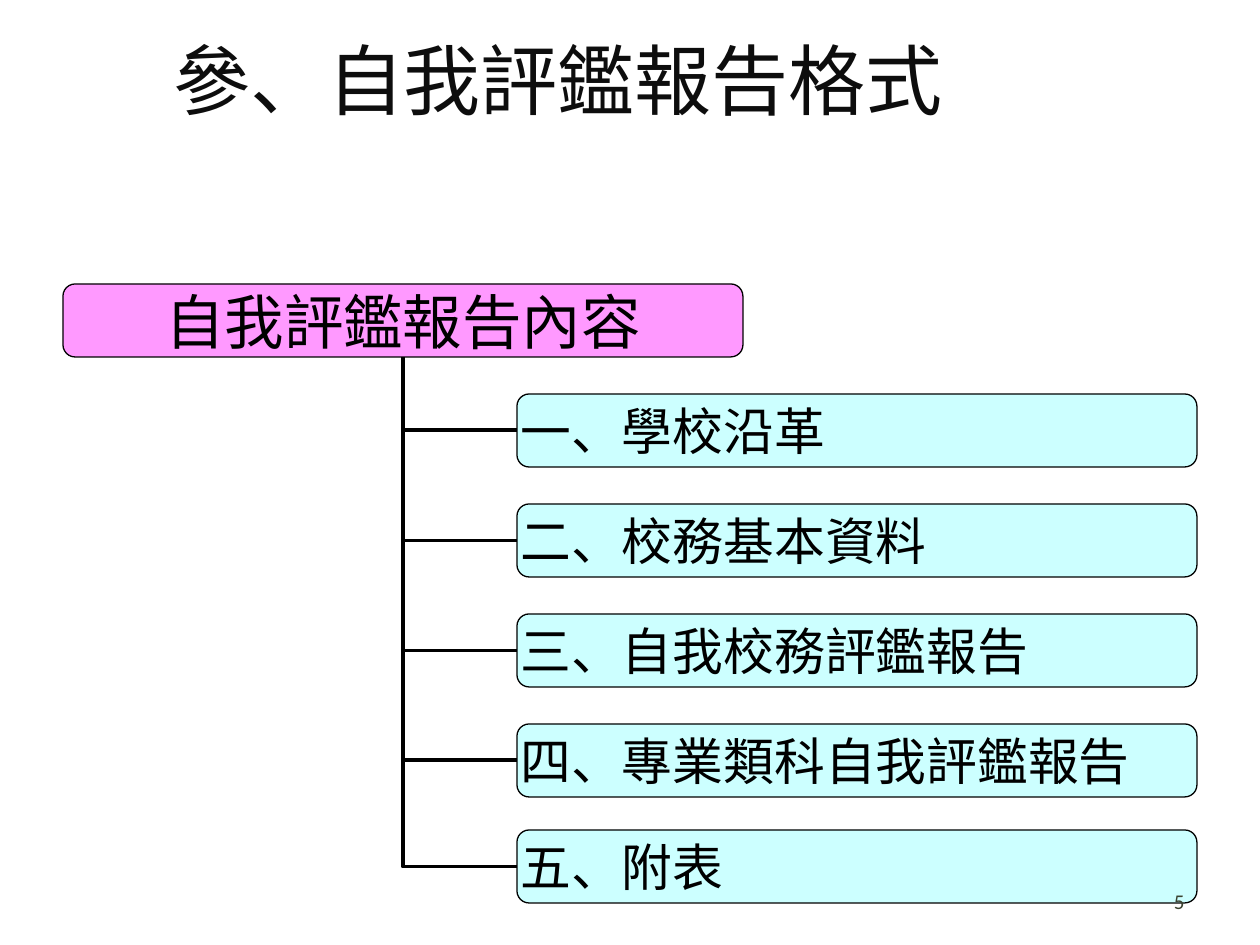
from pptx import Presentation, util as u
from pptx.dml.color import RGBColor
from pptx.enum import shapes, text
from pptx.oxml.ns import qn
from lxml import etree

PX = 914400 / 126
THEME = {
    "ink": "000000", "title": "0D0D0D", "number": "3A4230",
    "root": "FF99FF", "section": "CCFFFF",
    "title_size": 44, "root_size": 34, "section_size": 29, "number_size": 12,
}
SECTIONS = ["一、學校沿革", "二、校務基本資料", "三、自我校務評鑑報告",
            "四、專業類科自我評鑑報告", "五、附表"]


def px(*lengths):
    return [round(length * PX) for length in lengths]


def write(shape, words, size, color, font="Arial",
          align=text.PP_ALIGN.LEFT, inset=None, wrap=True):
    frame = shape.text_frame
    frame.word_wrap = wrap
    frame.vertical_anchor = text.MSO_ANCHOR.MIDDLE
    if inset is not None:
        frame.margin_left = frame.margin_right = inset
        frame.margin_top = frame.margin_bottom = inset
    para = frame.paragraphs[0]
    para.alignment = align
    span = para.add_run()
    span.text = words
    span.font.size = u.Pt(size)
    span.font.name = font
    span.font.color.rgb = RGBColor.from_string(color)


deck = Presentation()
deck.slide_width, deck.slide_height = px(1260, 945)
page = deck.slides.add_slide(deck.slide_layouts[5])

# Title
title = page.shapes.title
title.left, title.top, title.width, title.height = px(0, 0, 1134, 157)
write(title, "參、自我評鑑報告格式 ", THEME["title_size"], THEME["title"],
      font="Times New Roman", align=text.PP_ALIGN.CENTER)

# Root box, then one box per section; the last row sits slightly higher
ROOT_TOP, PITCH, LAST_TOP = 284, 110, 830
rows = [(63, ROOT_TOP, "自我評鑑報告內容", "root", text.PP_ALIGN.CENTER)]
for index, section in enumerate(SECTIONS, start=1):
    top = min(ROOT_TOP + index * PITCH, LAST_TOP)
    rows.append((517, top, section, "section", text.PP_ALIGN.LEFT))

boxes = []
for left, top, words, role, align in rows:
    box = page.shapes.add_shape(shapes.MSO_SHAPE.ROUNDED_RECTANGLE,
                                *px(left, top, 680, 73))
    box.shadow.inherit = False
    box.fill.solid()
    box.fill.fore_color.rgb = RGBColor.from_string(THEME[role])
    box.line.color.rgb = RGBColor.from_string(THEME["ink"])
    box.line.width = u.Pt(0.75)
    write(box, words, THEME[role + "_size"], THEME["ink"],
          align=align, inset=0, wrap=False)
    boxes.append(box)

# Elbows from the left of each section up to the bottom of the root
root, *sections = boxes
for box in sections:
    elbow = page.shapes.add_connector(
        shapes.MSO_CONNECTOR.ELBOW,
        box.left, box.top + box.height // 2,
        root.left + root.width // 2, root.top + root.height)
    elbow.begin_connect(box, 1)
    elbow.end_connect(root, 2)
    elbow.line.color.rgb = RGBColor.from_string(THEME["ink"])
    elbow.line.width = u.Pt(2.25)
    properties = elbow._element.spPr
    properties.find(qn("a:prstGeom")).set("prst", "bentConnector2")
    etree.SubElement(properties, qn("a:effectLst"))

# Page number
number = page.shapes.add_textbox(*px(903, 876, 294, 50))
write(number, "5", THEME["number_size"], THEME["number"],
      font="Calibri", align=text.PP_ALIGN.RIGHT)

deck.save("out.pptx")
